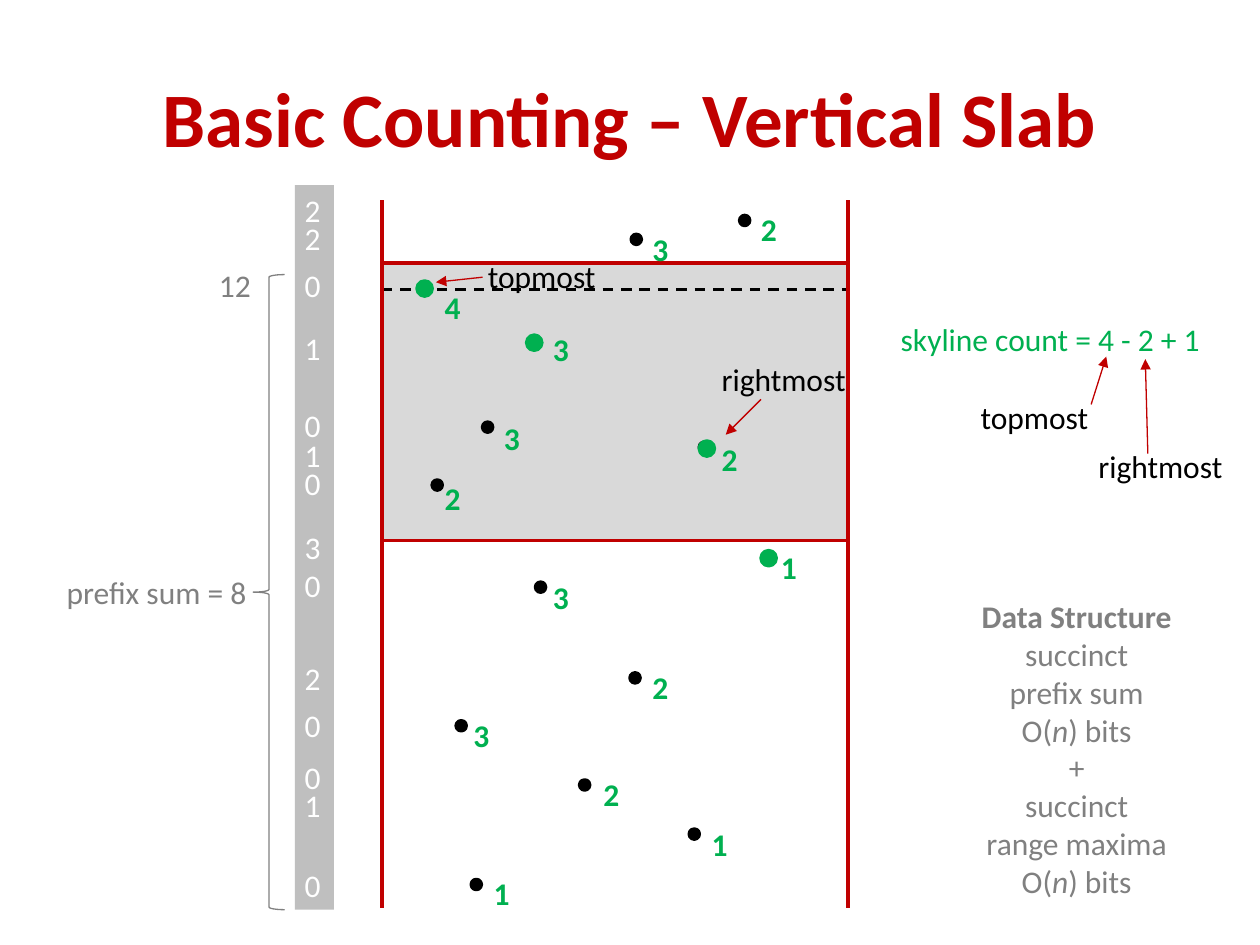
import collections
import dataclasses

import pptx
import pptx.dml.color
import pptx.enum.dml
import pptx.enum.shapes
import pptx.enum.text
import pptx.oxml
import pptx.oxml.ns
import pptx.util

Inches = pptx.util.Inches
SHAPE = pptx.enum.shapes.MSO_SHAPE
ALIGN = pptx.enum.text.PP_ALIGN
Box = collections.namedtuple("Box", "x y w h")


@dataclasses.dataclass(frozen=True)
class Theme:
    red: str = "C00000"
    green: str = "00B050"
    black: str = "000000"
    white: str = "FFFFFF"
    gray: str = "808080"
    band: str = "D9D9D9"
    bar: str = "BFBFBF"
    font: str = "Calibri"
    head: int = 44
    body: int = 18
    thin: float = 0.75
    dash: float = 1.5
    ring: float = 2
    edge: float = 2.25


THEME = Theme()

# Left and top of each dot, its label, and left and top of the label
DOTS = [
    (2.84, 0.12, "2", 2.91, 0.03), (1.98, 0.27, "3", 2.05, 0.19),
    (0.3, 0.66, "4", 0.4, 0.65), (1.18, 1.09, "3", 1.26, 0.98),
    (0.8, 1.76, "3", 0.87, 1.69), (2.52, 1.92, "2", 2.6, 1.85),
    (0.4, 2.22, "2", 0.4, 2.16), (3.03, 2.79, "1", 3.07, 2.71),
    (1.22, 3.03, "3", 1.26, 2.95), (1.97, 3.75, "2", 2.05, 3.66),
    (0.59, 4.13, "3", 0.63, 4.04), (1.57, 4.6, "2", 1.66, 4.51),
    (2.44, 4.99, "1", 2.52, 4.91), (0.71, 5.39, "1", 0.79, 5.3),
]
SKYLINE = [(0.28, 0.64), (1.15, 1.07), (3.01, 2.78), (2.52, 1.91)]
# Top of each entry in the bar, and its value
COUNTS = [
    (0, "2"), (0.22, "2"), (0.59, "0"), (1.09, "1"), (1.7, "0"),
    (1.94, "1"), (2.16, "0"), (2.67, "3"), (2.97, "0"), (3.71, "2"),
    (4.08, "0"), (4.5, "0"), (4.72, "1"), (5.35, "0"),
]


def rgb(code):
    return pptx.dml.color.RGBColor.from_string(code)


def place(box, x, y, w, h):
    return [Inches(n) for n in (box.x + x, box.y + y, w, h)]


def style(run, color, size=THEME.body, bold=False):
    run.font.name = THEME.font
    run.font.size = pptx.util.Pt(size)
    run.font.color.rgb = rgb(color)
    run.font.bold = bold


def write(slide, spot, text, color, align=ALIGN.LEFT, size=THEME.body, bold=False):
    frame = slide.shapes.add_textbox(*spot).text_frame
    frame.word_wrap = True
    frame.text = text
    for para in frame.paragraphs:
        para.alignment = align
        for run in para.runs:
            style(run, color, size, bold)
    return frame


def draw(slide, kind, spot, fill=None, line=None, width=THEME.ring):
    shape = slide.shapes.add_shape(kind, *spot)
    shape.shadow.inherit = False
    if fill:
        shape.fill.solid()
        shape.fill.fore_color.rgb = rgb(fill)
    else:
        shape.fill.background()
    if line:
        shape.line.color.rgb = rgb(line)
        shape.line.width = pptx.util.Pt(width)
    else:
        shape.line.fill.background()


def rule(slide, box, start, end, color, width, dash=False, arrow=False):
    ends = [Inches(n) for x, y in (start, end) for n in (box.x + x, box.y + y)]
    link = slide.shapes.add_connector(pptx.enum.shapes.MSO_CONNECTOR.STRAIGHT, *ends)
    link.line.color.rgb = rgb(color)
    link.line.width = pptx.util.Pt(width)
    if dash:
        link.line.dash_style = pptx.enum.dml.MSO_LINE.DASH
    if arrow:
        tail = pptx.oxml.parse_xml(
            f'<a:tailEnd {pptx.oxml.ns.nsdecls("a")} type="triangle"/>')
        link.line._get_or_add_ln().append(tail)
    link._element.spPr.append(
        pptx.oxml.parse_xml(f'<a:effectLst {pptx.oxml.ns.nsdecls("a")}/>'))


def point(slide, box, start, end):
    rule(slide, box, start, end, THEME.red, THEME.thin, arrow=True)


def add_title(slide, box):
    frame = write(slide, place(box, 0, 0, box.w, box.h), "Basic Counting – Vertical Slab",
                  THEME.red, ALIGN.CENTER, THEME.head, True)
    frame.vertical_anchor = pptx.enum.text.MSO_ANCHOR.MIDDLE


def add_slab(slide, box):
    # Query band, top line and slab walls
    draw(slide, SHAPE.RECTANGLE, place(box, 0, 0.5, box.w, 2.2),
         THEME.band, THEME.red, THEME.edge)
    rule(slide, box, (0, 0.71), (box.w, 0.71), THEME.black, THEME.dash, dash=True)
    for x in (0, box.w):
        rule(slide, box, (x, 0), (x, box.h), THEME.red, THEME.edge)

    # Points, with the skyline ones on top
    for x, y, *_ in DOTS:
        draw(slide, SHAPE.OVAL, place(box, x, y, 0.08, 0.08), THEME.black, THEME.black)
    for x, y in SKYLINE:
        draw(slide, SHAPE.OVAL, place(box, x, y, 0.12, 0.12), THEME.green, THEME.green)
    for _, _, label, x, y in DOTS:
        write(slide, place(box, x, y, 0.63, 0.4), label, THEME.green, bold=True)

    # Callouts
    write(slide, place(box, 2.44, 1.22, 1.5, 0.4), "rightmost", THEME.black, ALIGN.CENTER)
    point(slide, box, (3.01, 1.58), (2.73, 1.86))
    write(slide, place(box, 0.7, 0.4, 1.14, 0.4), "topmost", THEME.black, ALIGN.CENTER)
    point(slide, box, (0.8, 0.61), (0.43, 0.65))


def add_formula(slide, box):
    write(slide, place(box, 0, 0, box.w, 0.4), "skyline count = 4 - 2 + 1", THEME.green)
    point(slide, box, (1.61, 0.72), (1.73, 0.34))
    point(slide, box, (2.06, 1.11), (2.04, 0.36))
    write(slide, place(box, 0.59, 0.62, 1.14, 0.4), "topmost", THEME.black, ALIGN.CENTER)
    write(slide, place(box, 1.41, 1.01, 1.5, 0.4), "rightmost", THEME.black, ALIGN.CENTER)


def add_sums(slide, box):
    # Bar of counts at the right edge
    left = box.w - 0.31
    draw(slide, SHAPE.RECTANGLE, place(box, left, 0, 0.31, box.h), THEME.bar)
    for y, count in COUNTS:
        write(slide, place(box, left - 0.02, y, 0.31, 0.41), count, THEME.white)

    # Brace over the prefix
    write(slide, place(box, 1.03, 0.59, 0.63, 0.4), "12", THEME.gray, ALIGN.RIGHT)
    draw(slide, SHAPE.LEFT_BRACE, place(box, 1.58, 0.71, 0.25, box.h - 0.71),
         line=THEME.gray, width=THEME.thin)
    write(slide, place(box, 0, 3.03, 1.71, 0.4), "prefix sum = 8", THEME.gray)


def add_summary(slide, box):
    lines = ["Data Structure", "succinct", "prefix sum", "O(n) bits",
             "+", "succinct", "range maxima", "O(n) bits"]
    frame = write(slide, place(box, 0, 0, box.w, box.h), "\n".join(lines),
                  THEME.gray, ALIGN.CENTER)
    frame.paragraphs[0].runs[0].font.bold = True
    for para in frame.paragraphs:
        if para.text == "O(n) bits":
            para.runs[0].text = "O("
            for part in ("n", ") bits"):
                run = para.add_run()
                run.text = part
                style(run, THEME.gray)
                run.font.italic = part == "n"


def main():
    deck = pptx.Presentation()
    deck.slide_width, deck.slide_height = Inches(10), Inches(7.5)
    slide = deck.slides.add_slide(deck.slide_layouts[6])
    add_slab(slide, Box(3.03, 1.59, 3.7, 5.62))
    add_title(slide, Box(0, 0.3, 10, 1.25))
    add_formula(slide, Box(7.05, 2.49, 2.77, 1.41))
    add_sums(slide, Box(0.43, 1.47, 2.22, 5.75))
    add_summary(slide, Box(7.6, 4.69, 1.89, 2.52))
    deck.save("out.pptx")


if __name__ == "__main__":
    main()
